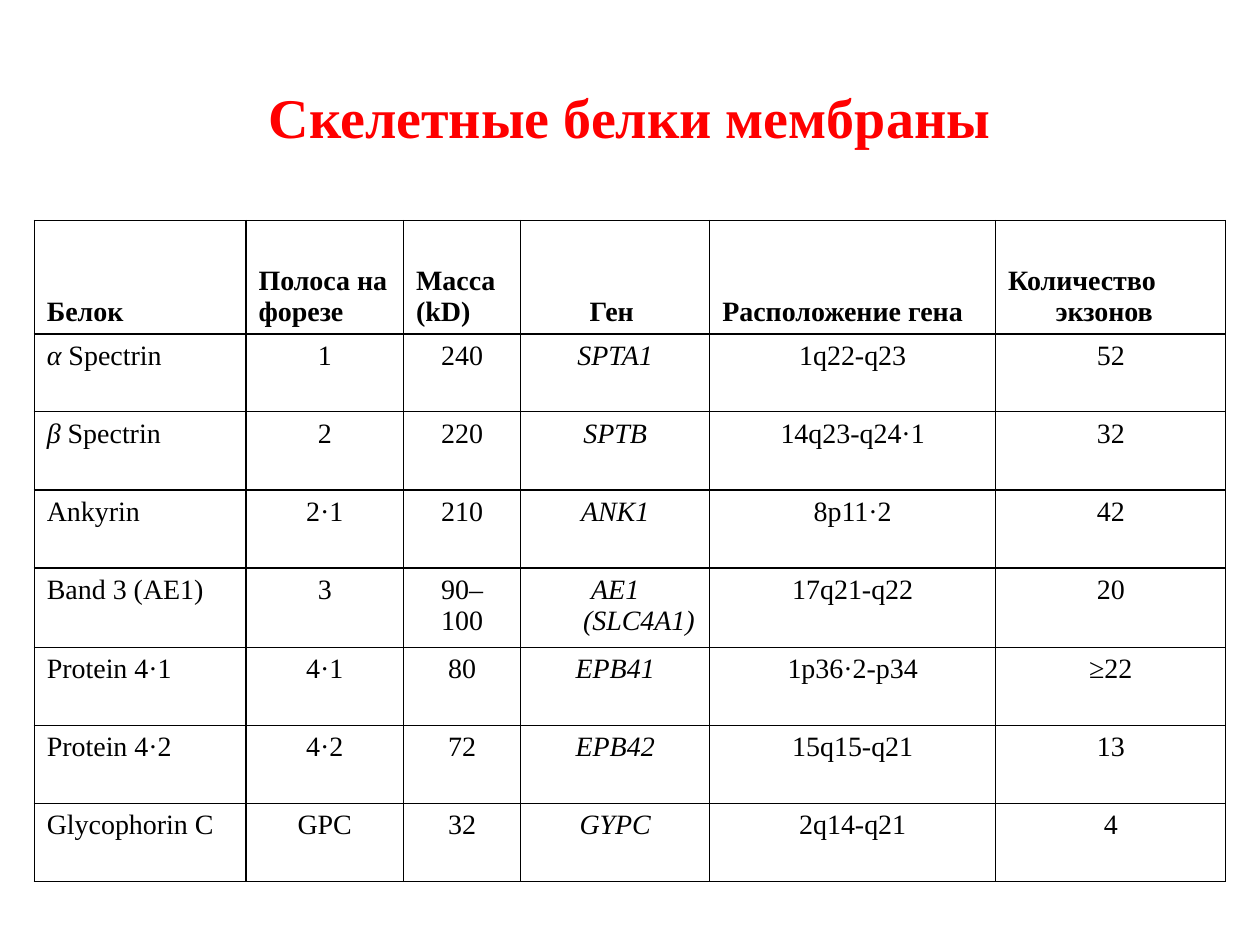
"""Build a slide with a table of the skeletal proteins of the membrane."""
import lxml.etree
import pptx
import pptx.dml.color
import pptx.enum.text
import pptx.oxml.ns
import pptx.util

Pt = pptx.util.Pt
ALIGN = pptx.enum.text.PP_ALIGN
ANCHOR = pptx.enum.text.MSO_ANCHOR
FONT = "Times New Roman"
COLORS = {"title": "FF0000", "text": "000000", "border": "000000"}
COLUMN_WIDTHS = [121, 90, 67, 108, 163.4, 131.6]
HEADER_HEIGHT, ROW_HEIGHT, TWO_LINE_HEIGHT = 64.8, 44.6, 45.4
HANGING_INDENT = 27
BAND_COLUMN, GENE_COLUMN = 1, 3
HEADERS = ["Белок", "Полоса на форезе", "Масса\n(kD)", "Ген ", "Расположение гена", "Количество экзонов"]
PROTEINS = [
    ["α Spectrin", "1", "240", "SPTA1", "1q22-q23", "52"],
    ["β Spectrin", "2", "220", "SPTB", "14q23-q24·1", "32"],
    ["Ankyrin", "2·1", "210", "ANK1", "8p11·2", "42"],
    ["Band 3 (AE1)", "3", "90–\n100", "AE1 (SLC4A1)", "17q21-q22", "20"],
    ["Protein 4·1", "4·1", "80", "EPB41", "1p36·2-p34", "≥22"],
    ["Protein 4·2", "4·2", "72", "EPB42", "15q15-q21", "13"],
    ["Glycophorin C", "GPC", "32", "GYPC", "2q14-q21", "4"],
]


def add_span(para, text, size, color, bold=False, italic=False):
    """Add one formatted run to a paragraph."""
    span = para.add_run()
    span.text = text
    span.font.name = FONT
    span.font.size = Pt(size)
    span.font.bold = bold
    span.font.italic = italic
    span.font.color.rgb = pptx.dml.color.RGBColor.from_string(COLORS[color])


def add_title(page, text):
    """Place and fill the title placeholder."""
    box = page.shapes.title
    box.left, box.top, box.width, box.height = Pt(36), Pt(21.6), Pt(648), Pt(90)
    box.text_frame.vertical_anchor = ANCHOR.MIDDLE
    para = box.text_frame.paragraphs[0]
    para.alignment = ALIGN.CENTER
    add_span(para, text, 32, "title", bold=True)


def set_borders(cell, top, bottom):
    """Draw the four borders of a cell, with the given top and bottom widths."""
    properties = cell._tc.get_or_add_tcPr()
    qn = pptx.oxml.ns.qn
    widths = {"a:lnL": 0.75, "a:lnR": 0.75, "a:lnT": top, "a:lnB": bottom}
    for index, (side, width) in enumerate(widths.items()):
        line = lxml.etree.Element(qn(side), w=str(Pt(width)))
        fill = lxml.etree.SubElement(line, qn("a:solidFill"))
        lxml.etree.SubElement(fill, qn("a:srgbClr"), val=COLORS["border"])
        properties.insert(index, line)


def split_spans(text, italic):
    """Split a leading Greek letter off as an italic span."""
    if text[0] in "αβ":
        return [(text[0], True), (text[1:], False)]
    return [(text, italic)]


def fill_cell(cell, text, align, bold, italic, hanging):
    """Write the lines of a cell as paragraphs."""
    cell.fill.background()
    cell.margin_left = cell.margin_right = Pt(7.2)
    cell.margin_top = cell.margin_bottom = Pt(3.6)
    cell.vertical_anchor = ANCHOR.BOTTOM if bold else ANCHOR.TOP
    frame = cell.text_frame
    for index, line in enumerate(text.split("\n")):
        para = frame.add_paragraph() if index else frame.paragraphs[0]
        para.alignment = align
        if hanging:
            properties = para._p.get_or_add_pPr()
            properties.set("marL", str(Pt(HANGING_INDENT)))
            properties.set("indent", str(-Pt(HANGING_INDENT)))
        for words, slanted in split_spans(line, italic):
            add_span(para, words, 16, "text", bold, slanted)


def add_protein_table(page):
    """Add the bordered table of proteins."""
    rows = [HEADERS] + PROTEINS
    heights = [HEADER_HEIGHT] + [
        TWO_LINE_HEIGHT if any("\n" in text for text in row) else ROW_HEIGHT for row in PROTEINS
    ]
    frame = page.shapes.add_table(
        len(rows), len(HEADERS), Pt(19.6), Pt(126), Pt(sum(COLUMN_WIDTHS)), Pt(sum(heights))
    )
    table = frame.table
    table.first_row = table.horz_banding = False
    for column, width in zip(table.columns, COLUMN_WIDTHS):
        column.width = Pt(width)
    for row_index, row in enumerate(rows):
        table.rows[row_index].height = Pt(heights[row_index])
        header = row_index == 0
        top = 1 if row_index <= 1 else 0.75
        bottom = 1 if row_index in (0, len(rows) - 1) else 0.75
        for column_index, text in enumerate(row):
            gene = column_index == GENE_COLUMN
            centred = gene if header else column_index > 0
            cell = table.cell(row_index, column_index)
            fill_cell(
                cell, text, ALIGN.CENTER if centred else ALIGN.LEFT,
                bold=header, italic=gene and not header,
                hanging=not (header and column_index == BAND_COLUMN),
            )
            set_borders(cell, top, bottom)


def main():
    """Build and save the deck."""
    deck = pptx.Presentation()
    deck.slide_width, deck.slide_height = Pt(720), Pt(540)
    page = deck.slides.add_slide(deck.slide_layouts[5])
    add_title(page, "Скелетные белки мембраны")
    add_protein_table(page)
    deck.save("out.pptx")


if __name__ == "__main__":
    main()
